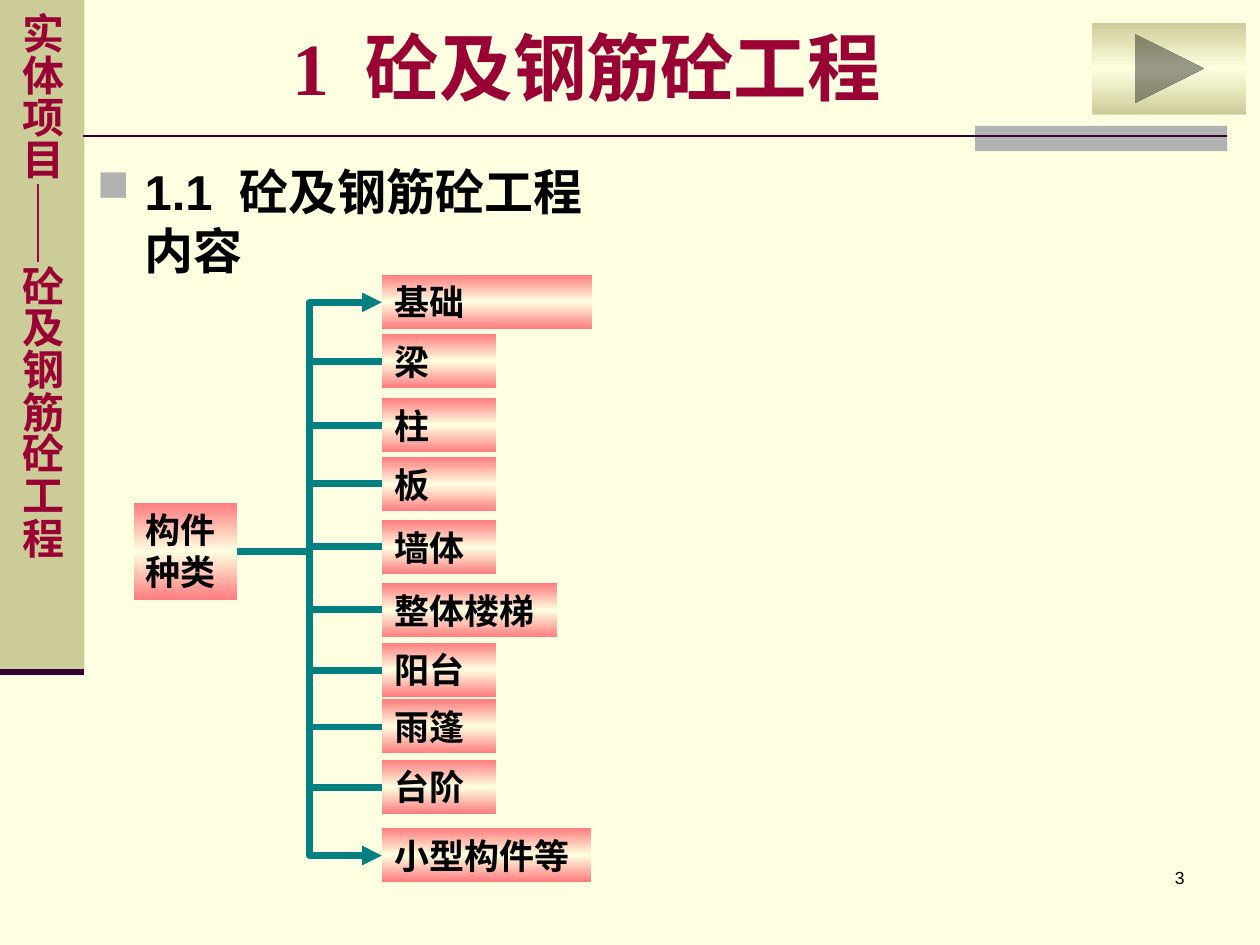
"""Build a slide that maps the kinds of concrete members as a bracket tree."""
from copy import deepcopy
from dataclasses import dataclass

from pptx import Presentation
from pptx.dml.color import RGBColor
from pptx.enum.shapes import MSO_CONNECTOR, MSO_SHAPE
from pptx.enum.text import MSO_ANCHOR, PP_ALIGN
from pptx.oxml.ns import qn
from pptx.oxml.xmlchemy import OxmlElement
from pptx.util import Inches, Pt

SIDEBAR = "实体项目——砼及钢筋砼工程"
TITLE = "1  砼及钢筋砼工程"
HEADING = "1.1  砼及钢筋砼工程内容"
PAGE = "3"
ROOT = "构件种类"
MEMBERS = [
    ("基础", 21.8, 16.7),
    ("梁", 26.5, 9.1),
    ("柱", 31.6, 9.1),
    ("板", 36.3, 9.1),
    ("墙体", 41.3, 9.1),
    ("整体楼梯", 46.3, 13.9),
    ("阳台", 51, 9.1),
    ("雨篷", 55.5, 9.1),
    ("台阶", 60.3, 9.1),
    ("小型构件等", 65.7, 16.6),
]

COLUMNS, ROWS, CELL = 100, 75, 0.1
ROOT_CELLS = (10.6, 39.9, 8.2, 7.7)
MEMBER_LEFT, MEMBER_HEIGHT = 30.3, 4.3


@dataclass(frozen=True)
class Theme:
    """Colours, typefaces and type sizes."""
    paper: str = "FFFFE1"
    khaki: str = "CCCC99"
    coral: str = "FF7C80"
    grey: str = "B2B2B2"
    plum: str = "330033"
    crimson: str = "990033"
    teal: str = "008080"
    ink: str = "000000"
    serif: str = "Times New Roman"
    sans: str = "Arial"
    title: int = 42
    heading: int = 28
    sidebar: int = 24
    member: int = 20
    page: int = 10


THEME = Theme()
FORMATS = {
    "title": {"name": THEME.serif, "size": Pt(THEME.title), "bold": True},
    "sidebar": {"name": THEME.serif, "size": Pt(THEME.sidebar), "bold": True},
    "heading": {"name": THEME.sans, "size": Pt(THEME.heading), "bold": True},
    "member": {"name": THEME.sans, "size": Pt(THEME.member), "bold": True},
    "page": {"name": THEME.sans, "size": Pt(THEME.page), "bold": False},
}


def cells(*counts):
    return [Inches(round(count * CELL, 2)) for count in counts]


def rgb(value):
    return RGBColor.from_string(value)


def xml_child(parent, tag, **attributes):
    child = OxmlElement(tag)
    for key, value in attributes.items():
        child.set(key, value)
    parent.append(child)
    return child


def write(holder, words, style, color=THEME.ink, align=PP_ALIGN.LEFT,
          anchor=MSO_ANCHOR.TOP, wrap=True):
    frame = holder.text_frame
    for key, value in {"word_wrap": wrap, "vertical_anchor": anchor}.items():
        setattr(frame, key, value)
    paragraph = frame.paragraphs[0]
    paragraph.alignment = align
    run = paragraph.add_run()
    run.text = words
    for key, value in FORMATS[style].items():
        setattr(run.font, key, value)
    run.font.color.rgb = rgb(color)
    return paragraph


def add_block(slide, place, fill, preset=MSO_SHAPE.RECTANGLE):
    block = slide.shapes.add_shape(preset, *cells(*place))
    block.shadow.inherit = False
    block.line.fill.background()
    block.fill.solid()
    block.fill.fore_color.rgb = rgb(fill)
    return block


def add_glow(slide, place, edge, preset=MSO_SHAPE.RECTANGLE):
    block = add_block(slide, place, edge, preset)
    block.fill.gradient()
    block.fill.gradient_angle = 270
    stops = block._element.spPr.find(qn("a:gradFill")).find(qn("a:gsLst"))
    stops.insert(1, deepcopy(stops[0]))
    for stop, (position, color) in zip(
            block.fill.gradient_stops,
            [(0, edge), (0.5, THEME.paper), (1, edge)]):
        stop.position = position
        stop.color.rgb = rgb(color)
    return block


def add_line(slide, start, end, color, width, kind=MSO_CONNECTOR.STRAIGHT):
    line = slide.shapes.add_connector(kind, *cells(*start, *end))
    line.line.color.rgb = rgb(color)
    line.line.width = Pt(width)
    xml_child(line._element.spPr, "a:effectLst")
    return line


def add_frame(slide):
    sidebar = add_block(slide, (0, 0, 6.7, 53.3), THEME.khaki)
    write(sidebar, SIDEBAR, "sidebar", THEME.crimson, PP_ALIGN.CENTER,
          MSO_ANCHOR.MIDDLE, wrap=False)
    sidebar.text_frame._txBody.bodyPr.set("vert", "eaVert")
    add_block(slide, (77.4, 10, 20, 2), THEME.grey)
    add_line(slide, (6.6, 10.8), (97.4, 10.8), THEME.plum, 1.5)
    add_line(slide, (0, 53.3), (6.7, 53.3), THEME.plum, 3.5)
    add_glow(slide, (86.7, 1.8, 12.2, 7.3), THEME.khaki,
             MSO_SHAPE.ACTION_BUTTON_FORWARD_OR_NEXT)


def add_texts(slide):
    page = slide.shapes.add_textbox(*cells(74.2, 68.3, 20.8, 5))
    write(page, PAGE, "page", align=PP_ALIGN.RIGHT)
    title = slide.shapes.add_textbox(*cells(6.9, 0.6, 79.3, 9.3))
    write(title, TITLE, "title", THEME.crimson, PP_ALIGN.CENTER,
          MSO_ANCHOR.MIDDLE)
    heading = slide.shapes.add_textbox(*cells(6.7, 12.3, 43.3, 60.8))
    layout = write(heading, HEADING, "heading")._p.get_or_add_pPr()
    indent = Inches(0.38)
    layout.set("marL", str(indent))
    layout.set("indent", str(-indent))
    xml_child(xml_child(layout, "a:buClr"), "a:srgbClr", val=THEME.grey)
    xml_child(layout, "a:buSzPct", val="90000")
    xml_child(layout, "a:buChar", char="■")


def add_tree(slide):
    left, top, width, height = ROOT_CELLS
    root = add_glow(slide, ROOT_CELLS, THEME.coral)
    write(root, ROOT, "member")
    for name, member_top, member_width in MEMBERS:
        member = add_glow(slide, (MEMBER_LEFT, member_top, member_width,
                                  MEMBER_HEIGHT), THEME.coral)
        write(member, name, "member")
    for name, member_top, _ in MEMBERS:
        branch = add_line(slide, (left + width, top + height / 2),
                          (MEMBER_LEFT, member_top + MEMBER_HEIGHT / 2),
                          THEME.teal, 3.75, MSO_CONNECTOR.ELBOW)
        if name in (MEMBERS[0][0], MEMBERS[-1][0]):
            xml_child(branch.line._get_or_add_ln(), "a:tailEnd",
                      type="triangle")


def main():
    deck = Presentation()
    deck.slide_width, deck.slide_height = cells(COLUMNS, ROWS)
    slide = deck.slides.add_slide(deck.slide_layouts[6])
    slide.background.fill.solid()
    slide.background.fill.fore_color.rgb = rgb(THEME.paper)
    add_frame(slide)
    add_texts(slide)
    add_tree(slide)
    deck.save("out.pptx")


if __name__ == "__main__":
    main()
